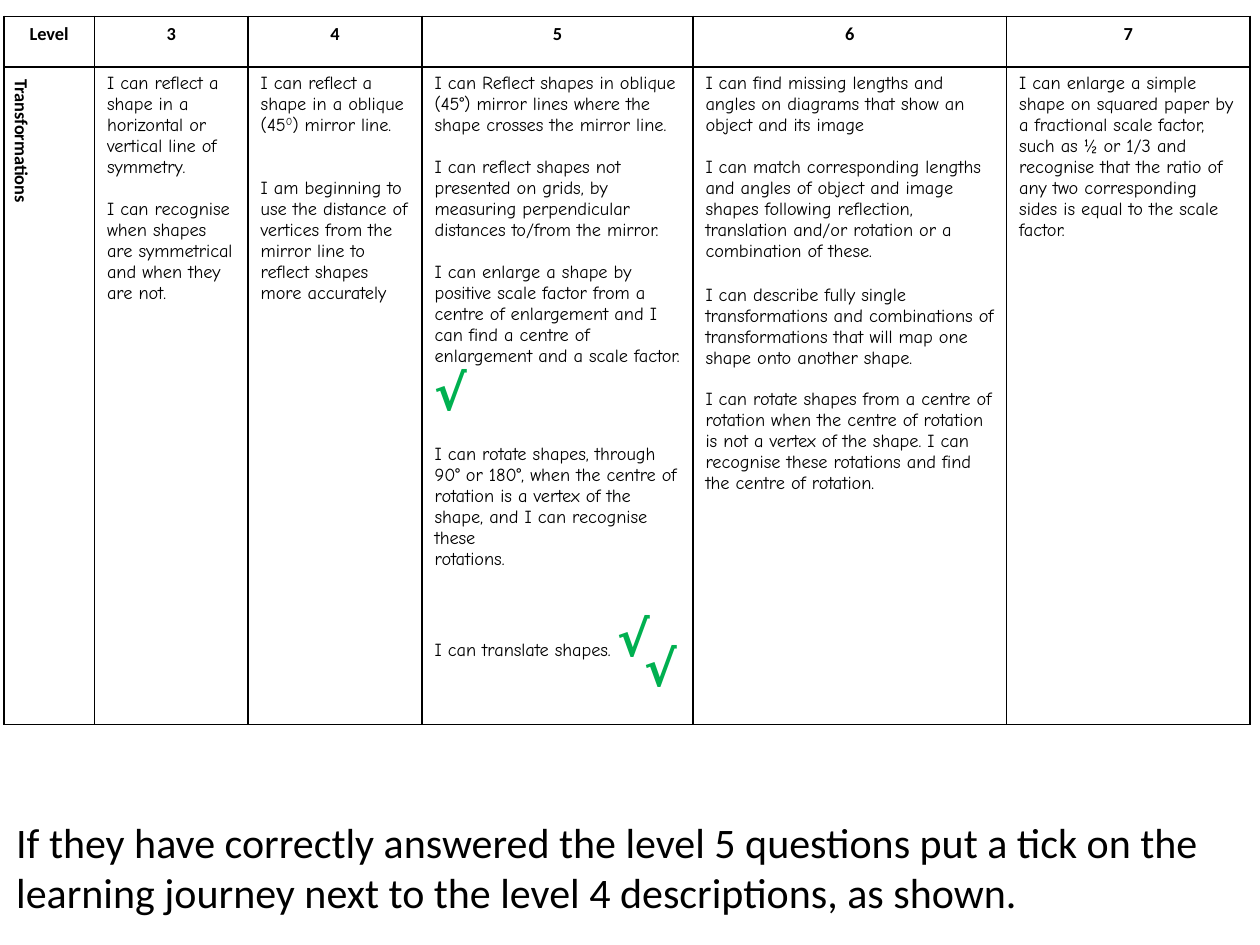
from dataclasses import dataclass
from lxml.etree import SubElement
from pptx import Presentation
from pptx.dml.color import RGBColor
from pptx.enum.text import PP_ALIGN as Align
from pptx.oxml.ns import qn
from pptx.util import Inches, Pt


@dataclass(frozen=True)
class Theme:
    ink: str = "000000"
    tick: str = "00B050"
    plain: str = "Calibri"
    hand: str = "Comic Neue"
    table_size: float = 10.5
    tick_size: float = 28
    note_size: float = 24


theme = Theme()
TICK = "√"
LINE = 12  # points left between statements


def style(font, name, size, color, bold=False):
    font.name, font.size, font.bold = name, Pt(size), bold
    font.color.rgb = RGBColor.from_string(color)


def draw_borders(cell):
    properties = cell._tc.get_or_add_tcPr()
    for index, side in enumerate(("lnL", "lnR", "lnT", "lnB")):
        line = SubElement(properties, qn(f"a:{side}"), w=str(Pt(1)))
        fill = SubElement(line, qn("a:solidFill"))
        SubElement(fill, qn("a:srgbClr"), val=theme.ink)
        properties.insert(index, line)


levels = ["Level", "3", "4", "5", "6", "7"]
widths = [0.72, 1.22, 1.38, 2.15, 2.49, 1.93]
heights = [0.4, 5.22]

# Each statement: points of space before it, then its runs
statements = [
    [(0, ["I can reflect a shape in a horizontal or vertical line of symmetry."]),
     (LINE, ["I can recognise when shapes are symmetrical and when they are not."])],
    [(0, ["I can reflect a shape in a oblique (45", "0", ") mirror line."]),
     (2 * LINE, ["I am beginning to use the distance of vertices from the mirror line "
                 "to reflect shapes more accurately"])],
    [(0, ["I can Reflect shapes in oblique (45°) mirror lines where the shape "
          "crosses the mirror line."]),
     (LINE, ["I can reflect shapes not presented on grids, by measuring "
             "perpendicular distances to/from the mirror."]),
     (LINE, ["I can enlarge a shape by positive scale factor from a centre of "
             "enlargement and I can find a centre of enlargement and a scale factor."]),
     (0, [TICK]),
     (LINE, ["I can rotate shapes, through 90° or 180°, when the centre of rotation "
             "is a vertex of the shape, and I can recognise these"]),
     (0, ["rotations."]),
     (2 * LINE, ["I can translate shapes. ", TICK])],
    [(0, ["I can find missing lengths and angles on diagrams that show an object "
          "and its image"]),
     (LINE, ["I can match corresponding lengths and angles of object and image shapes "
             "following reflection, translation and/or rotation or a combination of these."]),
     (LINE + 1, ["I can describe fully single transformations and combinations of "
                 "transformations that will map one shape onto another shape."]),
     (LINE, ["I can rotate shapes from a centre of rotation when the centre of rotation "
             "is not a vertex of the shape. I can recognise these rotations and find "
             "the centre of rotation."])],
    [(0, ["I can enlarge a simple shape on squared paper by a fractional scale factor, "
          "such as ½ or 1/3 and recognise that the ratio of any two corresponding "
          "sides is equal to the scale factor."])],
]

deck = Presentation()
deck.slide_width, deck.slide_height = Inches(10), Inches(7.5)
page = deck.slides.add_slide(deck.slide_layouts[6])

# Table grid
table = page.shapes.add_table(
    len(heights), len(widths), Inches(0.03), Inches(0.13),
    Inches(sum(widths)), Inches(sum(heights))).table
table.first_row = table.horz_banding = False
for column, width in zip(table.columns, widths):
    column.width = Inches(width)
for row, height in zip(table.rows, heights):
    row.height = Inches(height)
for cell in table.iter_cells():
    cell.fill.background()
    draw_borders(cell)

# Level headings
for column, level in enumerate(levels):
    cell = table.cell(0, column)
    cell.text = level
    para = cell.text_frame.paragraphs[0]
    para.alignment = Align.CENTER
    style(para.font, theme.plain, theme.table_size, theme.ink, bold=True)

# Topic, turned on its side
topic = table.cell(1, 0)
topic.text = "Transformations"
style(topic.text_frame.paragraphs[0].font, theme.plain, theme.table_size,
      theme.ink, bold=True)
topic._tc.get_or_add_tcPr().set("vert", "vert")

# Statements for each level
for column, entries in enumerate(statements, start=1):
    frame = table.cell(1, column).text_frame
    for number, (gap, parts) in enumerate(entries):
        para = frame.add_paragraph() if number else frame.paragraphs[0]
        para.space_before = Pt(gap)
        style(para.font, theme.hand, theme.table_size, theme.ink)
        for part in parts:
            span = para.add_run()
            span.text = part
            if part == TICK:
                style(span.font, theme.hand, theme.tick_size, theme.tick, bold=True)
            elif part == "0":  # degree sign written as a raised zero
                span.font._element.set("baseline", "30000")

# Instruction below the table and the loose tick over it
boxes = [
    ("If they have correctly answered the level 5 questions put a tick on the learning "
     "journey next to the level 4 descriptions, as shown.",
     (0.03, 6.43, 9.85, 0.91), True, (theme.plain, theme.note_size, theme.ink)),
    (TICK, (5.02, 5.01, 0.44, 0.57), False,
     (theme.hand, theme.tick_size, theme.tick, True)),
]
for text, place, wraps, look in boxes:
    box = page.shapes.add_textbox(*map(Inches, place))
    box.text_frame.word_wrap = wraps
    box.text_frame.text = text
    style(box.text_frame.paragraphs[0].font, *look)

deck.save("out.pptx")
